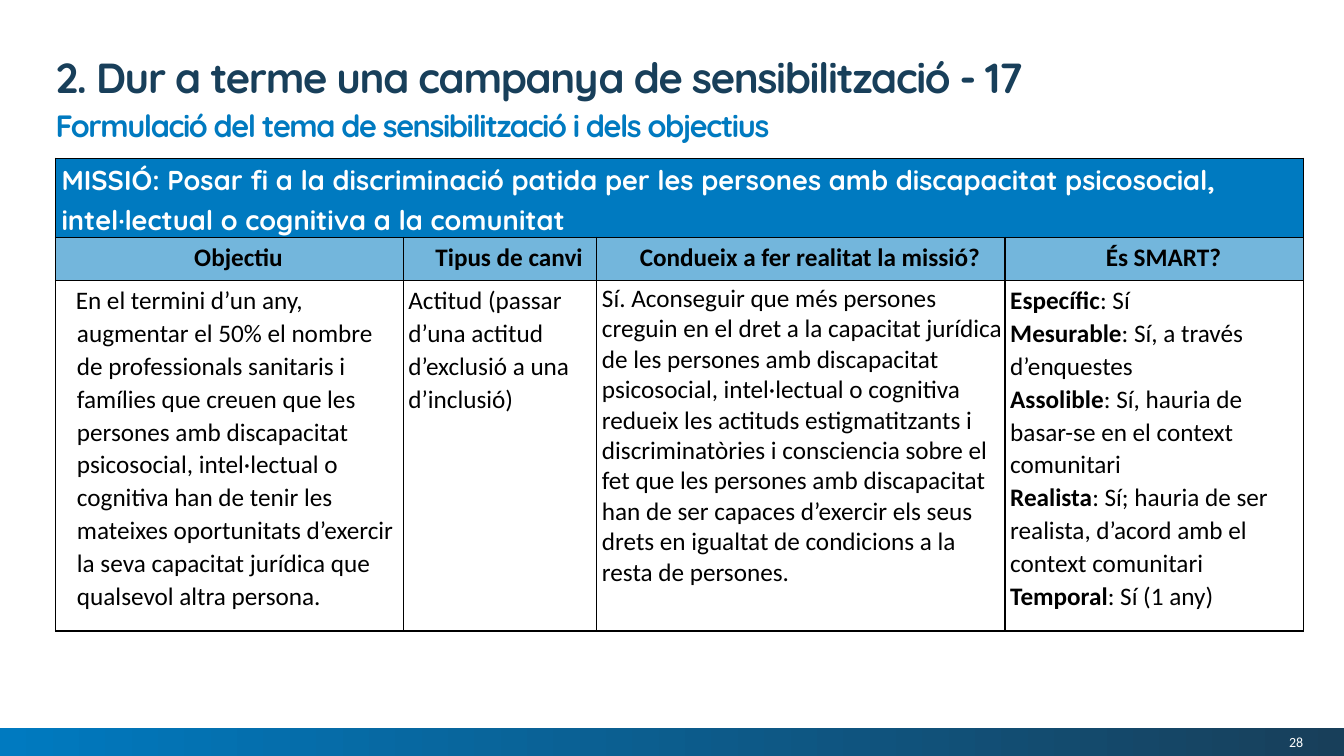
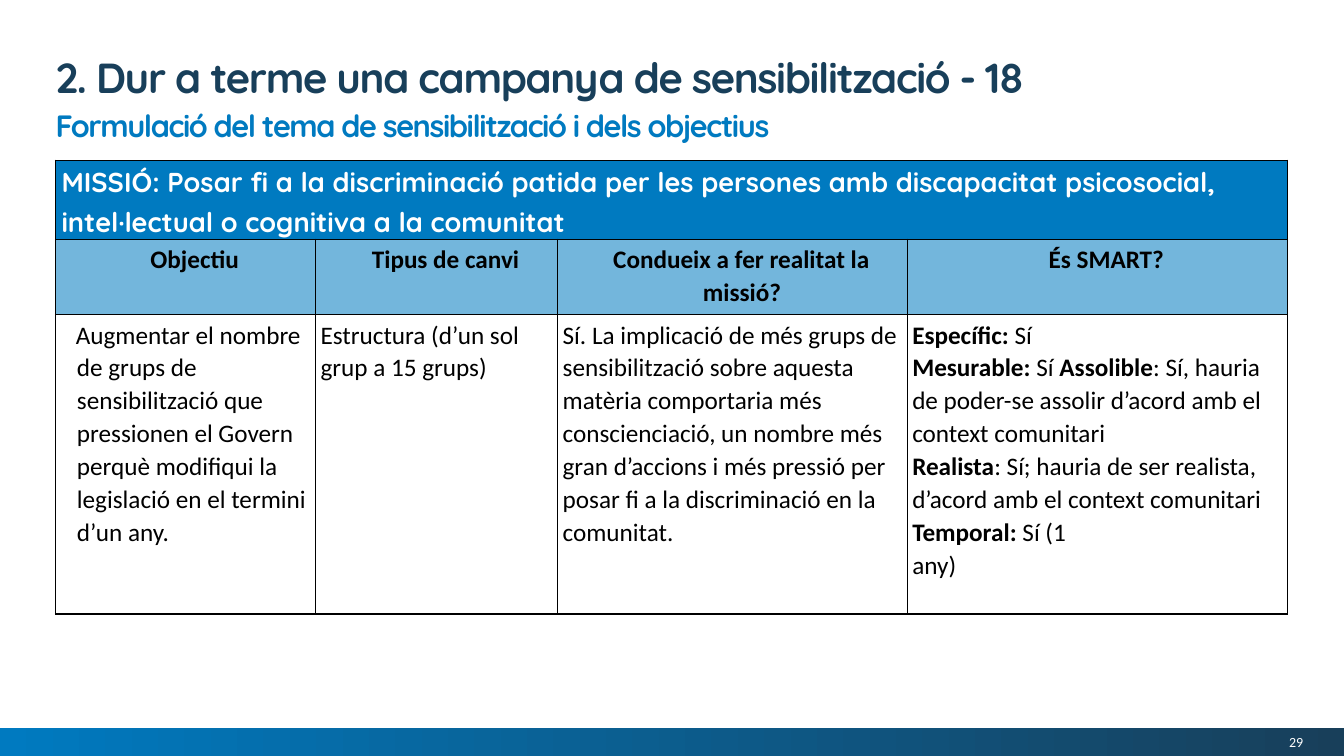
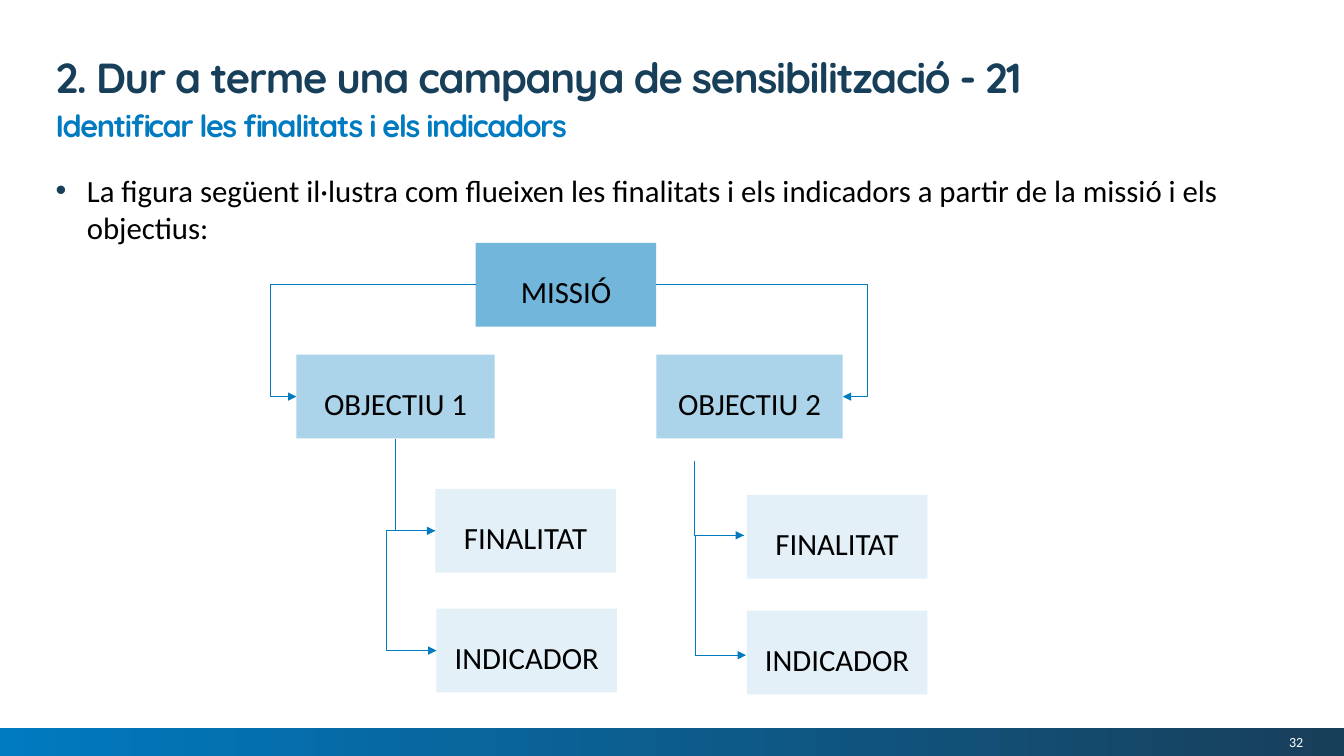
from dataclasses import dataclass

from lxml.etree import SubElement
from pptx import Presentation
from pptx.dml.color import RGBColor
from pptx.enum.shapes import MSO_CONNECTOR as Conn, MSO_SHAPE as Shape
from pptx.enum.text import MSO_ANCHOR as Anchor, MSO_AUTO_SIZE as AutoSize, PP_ALIGN as Align
from pptx.oxml.ns import qn
from pptx.util import Cm, Pt


@dataclass(frozen=True)
class Theme:
    blue: str = "007AC0"
    navy: str = "183F5A"
    sky: str = "73B6DC"
    light: str = "ABD3EA"
    pale: str = "E3F0F8"
    black: str = "000000"
    white: str = "FFFFFF"
    heading: str = "Quicksand"
    text: str = "Calibri"
    title_size: float = 30
    list_size: float = 22
    banner_size: float = 19.5
    cell_size: float = 18
    number_size: float = 10


T = Theme()
TITLE = "2. Dur a terme una campanya de sensibilització - "
MISSION = ("MISSIÓ: Posar fi a la discriminació patida per les persones amb discapacitat "
           "psicosocial, intel·lectual o cognitiva a la comunitat")
HEADERS = ("Objectiu", "Tipus de canvi", "Condueix a fer realitat la missió?", "És SMART?")
LEFT = 1.4
LAYOUT_BOXES = {
    0: (LEFT, 1.4, 31.27, 1.14),
    1: (LEFT, 2.64, 31.04, 0.99),
    2: (LEFT, 4.19, 31.04, 12.5),
}


def rgb(color):
    return RGBColor.from_string(color)


def apply(target, **values):
    for name, value in values.items():
        setattr(target, name, value)


def set_insets(target, left, top, right, bottom):
    apply(target, margin_left=Cm(left), margin_top=Cm(top),
          margin_right=Cm(right), margin_bottom=Cm(bottom))


def set_bullet(p, margin=0, indent=0, char=None):
    pPr = p._p.get_or_add_pPr()
    pPr.set("marL", str(Cm(margin)))
    pPr.set("indent", str(Cm(indent)))
    if char:
        SubElement(SubElement(pPr, qn("a:buClr")), qn("a:srgbClr"), val=T.navy)
        SubElement(pPr, qn("a:buChar"), char=char)
    else:
        SubElement(pPr, qn("a:buNone"))


def write(p, text, size, color=T.black, font=T.text, bold=False, tracking=None, **paragraph):
    """Fill a paragraph; each ** in the text switches bold on or off."""
    apply(p, **{"alignment": Align.LEFT, "space_before": Pt(0), **paragraph})
    for i, part in enumerate(text.split("**")):
        if not part:
            continue
        r = p.add_run()
        r.text = part
        apply(r.font, name=font, size=Pt(size), bold=bold or i % 2 == 1)
        r.font.color.rgb = rgb(color)
        if tracking:
            r._r.get_or_add_rPr().set("spc", str(tracking))


def prepare_layout(prs):
    layout = prs.slide_layouts.get_by_name("Two Content")
    for ph in layout.placeholders:
        box = LAYOUT_BOXES.get(ph.placeholder_format.idx)
        if box:
            names = ("left", "top", "width", "height")
            apply(ph, **{n: Cm(v) for n, v in zip(names, box)})
    return layout


def add_master_band(prs, s):
    """Draw the gradient band on a slide and move it to the master."""
    band = s.shapes.add_shape(Shape.RECTANGLE, 0, Cm(18.34), prs.slide_width, Cm(0.71))
    band.shadow.inherit = False
    band.line.fill.background()
    band.fill.gradient()
    band.fill.gradient_angle = 0
    for stop, color in zip(band.fill.gradient_stops, (T.blue, T.navy)):
        stop.color.rgb = rgb(color)
    prs.slide_master.shapes.element.append(band.element)


def add_heading(ph, text, size, color, anchor):
    tf = ph.text_frame
    apply(tf, word_wrap=True, auto_size=AutoSize.NONE, vertical_anchor=anchor)
    set_insets(tf, 0, 0, 0, 0)
    p = tf.paragraphs[0]
    set_bullet(p)
    write(p, text, size, color, T.heading, True, -100, line_spacing=Pt(33))


def add_page_number(s, number):
    tf = s.shapes.add_textbox(Cm(28.27), Cm(18.39), Cm(4.57), Cm(0.61)).text_frame
    apply(tf, word_wrap=True, vertical_anchor=Anchor.MIDDLE)
    set_insets(tf, 0, 0, 0, 0)
    write(tf.paragraphs[0], str(number), T.number_size, T.white, alignment=Align.RIGHT)


def add_slide(prs, layout, part, page, subtitle, body=None):
    s = prs.slides.add_slide(layout)
    add_heading(s.shapes.title, f"{TITLE}{part}", T.title_size, T.navy, Anchor.TOP)
    add_heading(s.placeholders[1], subtitle, T.list_size, T.blue, Anchor.BOTTOM)
    ph = s.placeholders[2]
    if body:
        tf = ph.text_frame
        apply(tf, word_wrap=True, auto_size=AutoSize.NONE)
        set_insets(tf, 0, 0.13, 0, 0.13)
        p = tf.paragraphs[0]
        set_bullet(p, 0.79, -0.79, "•")
        write(p, body, T.list_size, space_after=Pt(12))
    else:
        ph.element.getparent().remove(ph.element)
    add_page_number(s, page)
    return s


def set_borders(cell):
    tcPr = cell._tc.get_or_add_tcPr()
    for side in ("lnL", "lnR", "lnT", "lnB"):
        ln = SubElement(tcPr, qn(f"a:{side}"), w=str(Pt(1)))
        SubElement(SubElement(ln, qn("a:solidFill")), qn("a:srgbClr"), val=T.black)


def fill_cell(cell, lines, insets=(0.13, 0.08, 0.05, 0), fill=None, margin=0,
              size=T.cell_size, **style):
    set_insets(cell, *insets)
    if fill:
        cell.fill.solid()
        cell.fill.fore_color.rgb = rgb(fill)
    else:
        cell.fill.background()
    tf = cell.text_frame
    for i, line in enumerate(lines):
        p = tf.add_paragraph() if i else tf.paragraphs[0]
        set_bullet(p, margin, -0.03 if margin else 0)
        write(p, line, size, **style)


def add_mission_table(s, top, widths, heights, answers, spacings=(1.07,) * 4):
    frame = s.shapes.add_table(len(heights), len(widths), Cm(LEFT), Cm(top),
                               Cm(sum(widths)), Cm(sum(heights)))
    table = frame.table
    apply(table, first_row=False, horz_banding=False)
    for column, width in zip(table.columns, widths):
        column.width = Cm(width)
    for row, height in zip(table.rows, heights):
        row.height = Cm(height)
    for cell in table.iter_cells():
        set_borders(cell)
    banner = table.cell(0, 0)
    banner.merge(table.cell(0, len(widths) - 1))
    fill_cell(banner, [MISSION], (0.15, 0, 0.15, 0), T.blue, size=T.banner_size,
              color=T.white, font=T.heading, bold=True, line_spacing=1.15)
    for c, (header, lines, spacing) in enumerate(zip(HEADERS, answers, spacings)):
        fill_cell(table.cell(1, c), [header], fill=T.sky, margin=0.41, bold=True,
                  alignment=Align.CENTER, line_spacing=1.07)
        fill_cell(table.cell(2, c), lines, margin=0 if c else 0.41, line_spacing=spacing)


def add_box(s, text, left, top, width, fill):
    box = s.shapes.add_shape(Shape.RECTANGLE, Cm(left), Cm(top), Cm(width), Cm(2.11))
    box.shadow.inherit = False
    box.line.fill.background()
    box.fill.solid()
    box.fill.fore_color.rgb = rgb(fill)
    tf = box.text_frame
    apply(tf, word_wrap=True, vertical_anchor=Anchor.TOP)
    set_insets(tf, 0.25, 0.76, 0.25, 0.13)
    write(tf.paragraphs[0], text, T.list_size, alignment=Align.CENTER)
    return box


def point_on(box, across, down):
    """Point at the given fractions of a box's width and height."""
    return box.left + int(box.width * across), box.top + int(box.height * down)


def add_elbow(s, start, end, bend_x):
    """Arrow whose vertical part runs at bend_x."""
    line = s.shapes.add_connector(Conn.ELBOW, *start, *end)
    line.line.color.rgb = rgb(T.blue)
    line.line.width = Pt(0.75)
    spPr = line.element.spPr
    SubElement(spPr.find(qn("a:ln")), qn("a:tailEnd"), type="triangle")
    SubElement(spPr, qn("a:effectLst"))
    ratio = round((bend_x - start[0]) / (end[0] - start[0]) * 100000)
    guides = spPr.find(qn("a:prstGeom")).find(qn("a:avLst"))
    SubElement(guides, qn("a:gd"), name="adj1", fmla=f"val {ratio}")


def add_flow(s):
    mission = add_box(s, "MISSIÓ", 11.99, 6.12, 4.55, T.sky)
    goal_1 = add_box(s, "OBJECTIU 1", 7.47, 8.94, 5, T.light)
    goal_2 = add_box(s, "OBJECTIU 2", 16.54, 8.94, 4.7, T.light)
    purpose = add_box(s, "FINALITAT", 10.97, 12.32, 4.55, T.pale)
    indicator = add_box(s, "INDICADOR", 11, 15.34, 4.55, T.pale)
    add_box(s, "FINALITAT", 18.82, 12.47, 4.55, T.pale)
    add_box(s, "INDICADOR", 18.82, 15.39, 4.55, T.pale)

    below_1 = point_on(goal_1, 0.5, 1)
    purpose_in = point_on(purpose, 0, 0.5)
    below_2 = Cm(17.5), Cm(11.61)
    purpose_2_in = Cm(18.75), Cm(13.49)
    for start, end, bend_x in (
        (point_on(mission, 0, 0.5), point_on(goal_1, 0, 0.5), Cm(6.83)),
        (point_on(mission, 1, 0.5), point_on(goal_2, 1, 0.5), Cm(21.87)),
        (below_1, purpose_in, below_1[0]),
        (purpose_in, point_on(indicator, 0, 0.5), Cm(9.75)),
        (below_2, purpose_2_in, below_2[0]),
        (purpose_2_in, (Cm(18.8), Cm(16.51)), Cm(17.53)),
    ):
        add_elbow(s, start, end, bend_x)


def main():
    prs = Presentation()
    apply(prs, slide_width=Cm(33.87), slide_height=Cm(19.05))
    layout = prepare_layout(prs)
    topic = "Formulació del tema de sensibilització i dels objectius"

    s = add_slide(prs, layout, 17, 28, topic)
    add_master_band(prs, s)
    add_mission_table(s, 3.99, (8.76, 4.88, 10.29, 7.52), (1.99, 1.08, 8.84), (
        ["En el termini d’un any, augmentar el 50% el nombre de professionals sanitaris i "
         "famílies que creuen que les persones amb discapacitat psicosocial, intel·lectual o "
         "cognitiva han de tenir les mateixes oportunitats d’exercir la seva capacitat "
         "jurídica que qualsevol altra persona."],
        ["Actitud (passar d’una actitud d’exclusió a una d’inclusió)"],
        ["Sí. Aconseguir que més persones creguin en el dret a la capacitat jurídica de les "
         "persones amb discapacitat psicosocial, intel·lectual o cognitiva redueix les "
         "actituds estigmatitzants i discriminatòries i consciencia sobre el fet que les "
         "persones amb discapacitat han de ser capaces d’exercir els seus drets en igualtat "
         "de condicions a la resta de persones."],
        ["**Específic**: Sí",
         "**Mesurable**: Sí, a través d’enquestes",
         "**Assolible**: Sí, hauria de basar-se en el context comunitari",
         "**Realista**: Sí; hauria de ser realista, d’acord amb el context comunitari",
         "**Temporal**: Sí (1 any)"],
    ), (1.07, 1.07, 0.99, 1.07))

    s = add_slide(prs, layout, 18, 29, topic)
    add_mission_table(s, 4.04, (6.55, 6.1, 8.81, 9.58), (1.99, 1.9, 7.54), (
        ["Augmentar el nombre de grups de sensibilització que pressionen el Govern perquè "
         "modifiqui la legislació en el termini d’un any."],
        ["Estructura (d’un sol grup a 15 grups)"],
        ["Sí. La implicació de més grups de sensibilització sobre aquesta matèria comportaria "
         "més conscienciació, un nombre més gran d’accions i més pressió per posar fi a la "
         "discriminació en la comunitat."],
        ["**Específic:** Sí",
         "**Mesurable:** Sí** Assolible**: Sí, hauria de poder-se assolir d’acord amb el "
         "context comunitari",
         "**Realista**: Sí; hauria de ser realista, d’acord amb el context comunitari",
         "**Temporal:** Sí (1",
         "any)"],
    ))

    s = add_slide(prs, layout, 21, 32, "Identificar les finalitats i els indicadors",
                  "La figura següent il·lustra com flueixen les finalitats i els indicadors "
                  "a partir de la missió i els objectius:")
    add_flow(s)
    prs.save("out.pptx")


if __name__ == "__main__":
    main()
